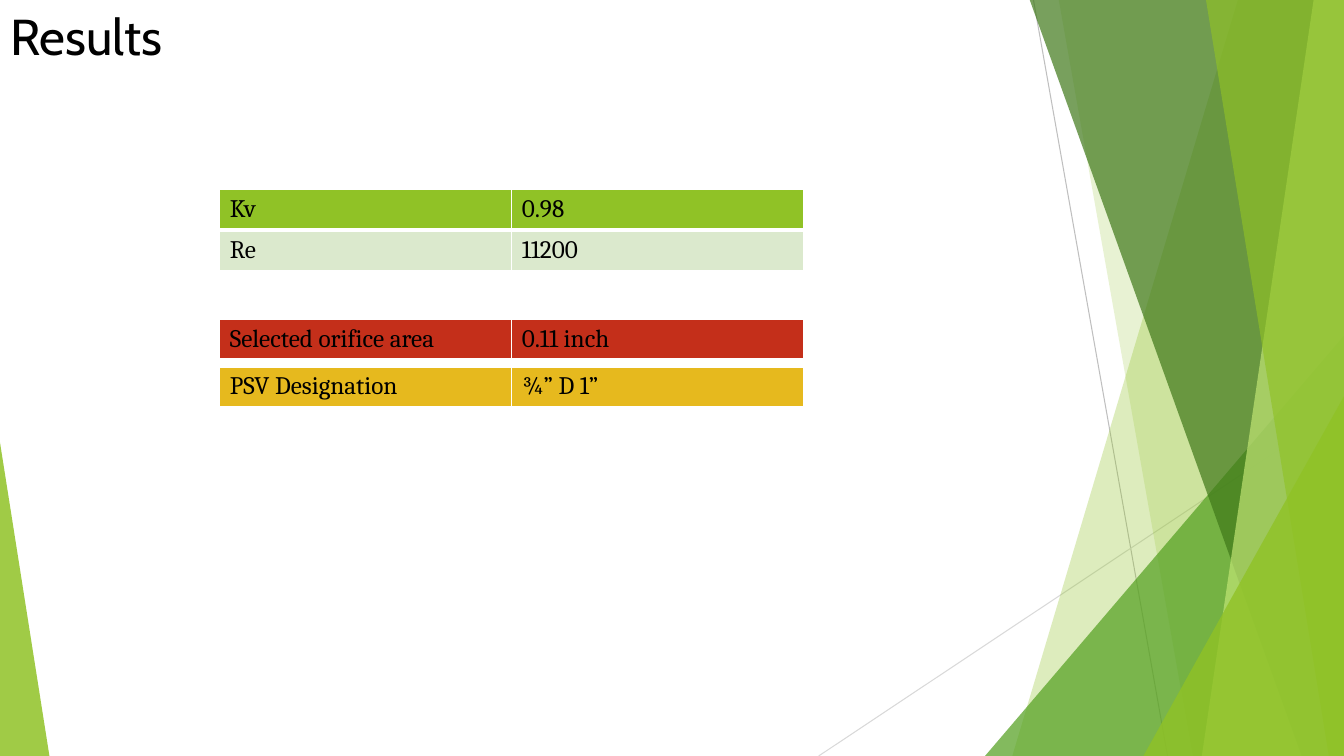
from lxml import etree
from pptx import Presentation
from pptx import util as u
from pptx.dml import color
from pptx.enum import shapes, text
from pptx.oxml import ns

WIDTH, HEIGHT = 13.33, 7.5
LIME, WHITE = "90C226", "FFFFFF"


def rgb(value):
    return color.RGBColor.from_string(value)


def write(frame, words, font="Cambria", size=18, ink="000000",
          align=text.PP_ALIGN.LEFT, anchor=text.MSO_ANCHOR.TOP):
    frame.word_wrap = True
    frame.vertical_anchor = anchor
    paragraph = frame.paragraphs[0]
    paragraph.alignment = align
    run = paragraph.add_run()
    run.text = words
    run.font.name, run.font.size = font, u.Pt(size)
    run.font.bold = False
    run.font.color.rgb = rgb(ink)


class ResultsSlide:
    def __init__(self, deck):
        self.slide = deck.slides.add_slide(deck.slide_layouts[5])
        self.shapes = self.slide.shapes

    def title(self, words, left, top, width, height):
        heading = self.shapes.title
        heading.left, heading.top = u.Inches(left), u.Inches(top)
        heading.width, heading.height = u.Inches(width), u.Inches(height)
        write(heading.text_frame, words, font="Cabin", size=36)

    def line(self, start, end, ink):
        ray = self.shapes.add_connector(
            shapes.MSO_CONNECTOR.STRAIGHT, *map(u.Inches, start + end))
        ray.line.color.rgb, ray.line.width = rgb(ink), u.Pt(0.75)
        etree.SubElement(ray._element.spPr, ns.qn("a:effectLst"))

    def paint(self, facet, fill, opacity):
        facet.shadow.inherit = False
        facet.line.fill.background()
        facet.fill.solid()
        facet.fill.fore_color.rgb = rgb(fill)
        tint = facet._element.spPr.find(".//" + ns.qn("a:srgbClr"))
        etree.SubElement(tint, ns.qn("a:alpha"), val=str(opacity * 1000))

    def band(self, top_x, bottom_x, fill, opacity):
        """A facet that runs from a slanted left side to the right slide edge."""
        corners = [(top_x, -0.01), (WIDTH, -0.01), (WIDTH, HEIGHT), (bottom_x, HEIGHT)]
        points = [(u.Inches(x), u.Inches(y)) for x, y in corners]
        builder = self.shapes.build_freeform(*points[0])
        builder.add_line_segments(points[1:], close=True)
        self.paint(builder.convert_to_shape(), fill, opacity)

    def triangle(self, left, top, width, apex, fill, opacity):
        """A facet that stands on the bottom slide edge."""
        facet = self.shapes.add_shape(
            shapes.MSO_SHAPE.ISOSCELES_TRIANGLE,
            *map(u.Inches, (left, top, width, HEIGHT - top)))
        facet.adjustments[0] = apex
        self.paint(facet, fill, opacity)

    def borders(self, cell, bottom):
        props = cell._tc.get_or_add_tcPr()
        sides = (("lnL", 1), ("lnR", 1), ("lnT", 1), ("lnB", bottom))
        for place, (side, points) in enumerate(sides):
            edge = etree.Element(ns.qn("a:" + side), w=str(u.Pt(points)))
            solid = etree.SubElement(edge, ns.qn("a:solidFill"))
            etree.SubElement(solid, ns.qn("a:srgbClr"), val=WHITE)
            props.insert(place, edge)

    def table(self, top, rows, left=2.18, width=5.79, row_height=0.405):
        """Each row is (label, value, fill)."""
        grid = self.shapes.add_table(
            len(rows), 2, *map(u.Inches, (left, top, width, row_height * len(rows)))).table
        grid.first_row = grid.horz_banding = False
        for r, (*words, fill) in enumerate(rows):
            for c, word in enumerate(words):
                cell = grid.cell(r, c)
                cell.fill.solid()
                cell.fill.fore_color.rgb = rgb(fill)
                self.borders(cell, bottom=1 if r else 3)
                write(cell.text_frame, word)


def main():
    deck = Presentation()
    deck.slide_width, deck.slide_height = u.Inches(WIDTH), u.Inches(HEIGHT)
    results = ResultsSlide(deck)

    # Faceted background
    results.line((10.25, 0), (11.58, HEIGHT), "BFBFBF")
    results.line((WIDTH, 4.03), (8.12, HEIGHT), "D9D9D9")
    results.band(12.28, 10.04, LIME, 30)
    results.band(10.5, 11.83, LIME, 20)
    results.triangle(9.77, 3.33, 3.56, 1, "54A021", 72)
    results.band(10.21, 12.91, "3F7819", 70)
    results.band(13.03, 11.92, "C0E474", 70)
    results.band(11.96, 13.18, LIME, 65)
    results.triangle(11.34, 3.93, 1.99, 1, LIME, 80)
    results.triangle(0, 4.39, 0.49, 0, LIME, 85)

    # Heading
    results.title("Results", 0, 0, 10.14, 0.81)

    # Result tables
    results.table(1.88, [("Kv", "0.98", LIME), ("Re", "11200", "DBE9CD")])
    results.table(3.17, [("Selected orifice area", "0.11 inch", "C42F1A")])
    results.table(3.64, [("PSV Designation", "¾” D 1”", "E6B91E")])

    deck.save("out.pptx")


if __name__ == "__main__":
    main()
